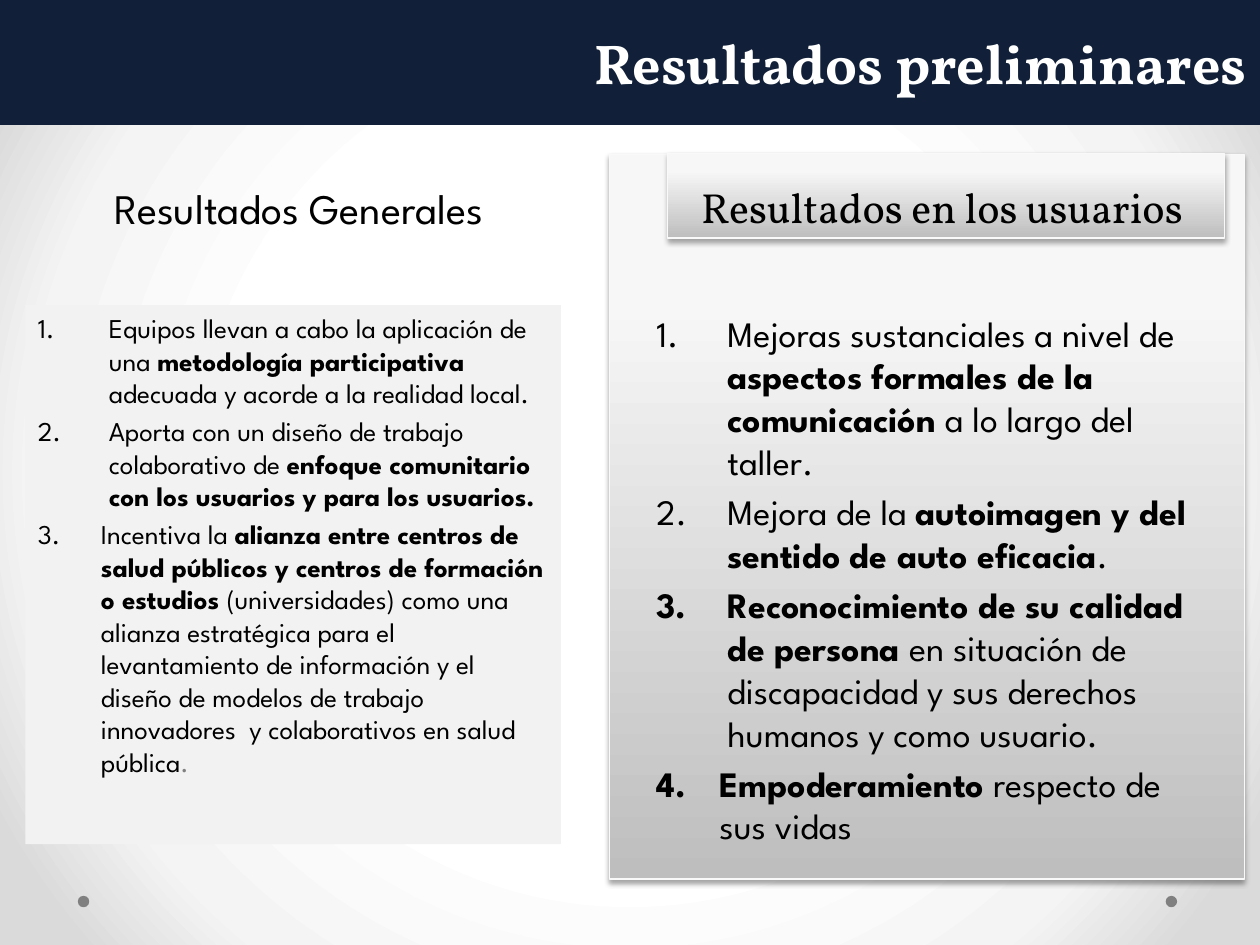
"""Build the slide of preliminary results with two numbered lists."""
from lxml import etree
from pptx import Presentation
from pptx.dml.color import RGBColor
from pptx.enum.shapes import MSO_SHAPE
from pptx.enum.text import MSO_ANCHOR, MSO_AUTO_SIZE, PP_ALIGN
from pptx.oxml.ns import qn
from pptx.util import Cm, Pt

RECT, OVAL = MSO_SHAPE.RECTANGLE, MSO_SHAPE.OVAL
TOP, MIDDLE, BOTTOM = MSO_ANCHOR.TOP, MSO_ANCHOR.MIDDLE, MSO_ANCHOR.BOTTOM
CENTER, RIGHT, LEFT = PP_ALIGN.CENTER, PP_ALIGN.RIGHT, PP_ALIGN.LEFT
NO_FIT = MSO_AUTO_SIZE.NONE

THEME = {
    "sans": "League Spartan", "serif": "Vollkorn",
    "title": 32, "heading": 24, "general": 15.5, "users": 20.4,
    "navy": "112038", "white": "FFFFFF", "black": "000000",
    "gray": "808080", "pale": "F2F2F2", "edge": "F9F9F9",
    "panel": [(0, "BEBEBE"), (80, "F7F7F7"), (100, "F8F8F8")],
    "backdrop": [(50, "FFFFFF"), (76, "F4F4F4"), (92, "DADADA")],
}

GENERAL = [
    "Equipos llevan a cabo la aplicación de una *metodología participativa *"
    "adecuada y acorde a la realidad local.",
    "Aporta con un diseño de trabajo colaborativo de "
    "*enfoque comunitario con los usuarios y para los usuarios.",
    "Incentiva la *alianza entre centros de salud públicos y centros de "
    "formación o estudios *(universidades) como una alianza estratégica para "
    "el levantamiento de información y el diseño de modelos de trabajo "
    "innovadores  y colaborativos en salud pública**.",
]
USERS = [
    "Mejoras sustanciales a nivel de *aspectos formales de la comunicación*"
    " a lo largo del taller.",
    "Mejora de la *autoimagen y del sentido de auto eficacia*.",
    "*Reconocimiento de su calidad de persona *en situación de discapacidad "
    "y sus derechos humanos y como usuario.",
    "*Empoderamiento* respecto de sus vidas",
]


def set_stops(fill, root, stops):
    fill.gradient()
    gs_list = next(root.iter(qn("a:gsLst")))
    for gs in list(gs_list):
        gs_list.remove(gs)
    for pos, color in stops:
        gs = etree.SubElement(gs_list, qn("a:gs"), pos=str(pos * 1000))
        etree.SubElement(gs, qn("a:srgbClr"), val=color)
    return gs_list.getparent()


def format_text(sp, anchor, align, font, size, color):
    tf = sp.text_frame
    tf.word_wrap = True
    tf.auto_size = NO_FIT
    tf.vertical_anchor = anchor
    for p in tf.paragraphs:
        p.alignment = align
        for r in p.runs:
            r.font.name = THEME[font]
            r.font.size = Pt(THEME[size])
            r.font.color.rgb = RGBColor.from_string(THEME[color])


prs = Presentation()
prs.slide_width, prs.slide_height = Cm(25.4), Cm(19.05)
slide = prs.slides.add_slide(prs.slide_layouts[4])
shapes = slide.shapes
title, head_general, list_general, head_users, list_users = slide.placeholders

grad = set_stops(slide.background.fill, slide.element, THEME["backdrop"])
lin = grad.find(qn("a:lin"))
if lin is not None:
    grad.remove(lin)
radial = etree.SubElement(grad, qn("a:path"), path="circle")
etree.SubElement(radial, qn("a:fillToRect"), l="50000", t="50000", r="50000", b="50000")

panel = shapes.add_shape(RECT, Cm(12.29), Cm(3.12), Cm(12.8), Cm(14.6))
shapes._spTree.insert(2, panel.element)
for x in (1.57, 23.5):
    dot = shapes.add_shape(OVAL, Cm(x), Cm(18.06), Cm(0.23), Cm(0.23))
    dot.shadow.inherit = False
    dot.fill.solid()
    dot.fill.fore_color.rgb = RGBColor.from_string(THEME["gray"])
    dot.line.fill.background()
    shapes._spTree.insert(2, dot.element)

for sp, x, y, w, h in (
    (title, 0, 0, 25.4, 2.52),
    (head_general, 0.51, 3.12, 11.23, 1.7),
    (head_users, 13.46, 3.1, 11.23, 1.7),
    (list_general, 0.51, 6.15, 10.8, 10.87),
    (list_users, 12.98, 6.15, 11.23, 10.87),
):
    sp.left, sp.top, sp.width, sp.height = Cm(x), Cm(y), Cm(w), Cm(h)

for sp in (panel, head_users):
    set_stops(sp.fill, sp.element, THEME["panel"])
    sp.fill.gradient_angle = 90
    sp.line.color.rgb = RGBColor.from_string(THEME["edge"])
    sp.line.width = Pt(0.75)
    sp.shadow.inherit = False
    effects = next(sp.element.iter(qn("a:effectLst")))
    shadow = etree.SubElement(effects, qn("a:outerShdw"), blurRad=str(Pt(3.1)),
                              dist=str(Pt(1.8)), dir="5400000", rotWithShape="0")
    tint = etree.SubElement(shadow, qn("a:srgbClr"), val=THEME["black"])
    etree.SubElement(tint, qn("a:alpha"), val="35000")

for sp, color in ((title, "navy"), (list_general, "pale")):
    sp.fill.solid()
    sp.fill.fore_color.rgb = RGBColor.from_string(THEME[color])

title.text_frame.text = "Resultados preliminares"
format_text(title, MIDDLE, RIGHT, "serif", "title", "white")
title.text_frame.paragraphs[0].runs[0].font.bold = True

for sp, text, font in (
    (head_general, "Resultados Generales ", "sans"),
    (head_users, "Resultados en los usuarios ", "serif"),
):
    sp.text_frame.text = text
    sp.text_frame.paragraphs[0].runs[0].font.bold = False
    format_text(sp, BOTTOM, CENTER, font, "heading", "black")

for sp, items, size in ((list_general, GENERAL, "general"), (list_users, USERS, "users")):
    tf = sp.text_frame
    for i, item in enumerate(items):
        p = tf.add_paragraph() if i else tf.paragraphs[0]
        for j, part in enumerate(item.split("*")):
            if part:
                r = p.add_run()
                r.text = part
                r.font.bold = j % 2 == 1
        indent = Cm(1.27 if i == len(items) - 1 else 1.43)
        pPr = p._p.get_or_add_pPr()
        pPr.set("marL", str(indent))
        pPr.set("indent", str(-indent))
        etree.SubElement(pPr, qn("a:buFont"), typeface="+mj-lt")
        etree.SubElement(pPr, qn("a:buAutoNum"), type="arabicPeriod")
    format_text(sp, TOP, LEFT, "sans", size, "black")

full_stop = list_general.text_frame.paragraphs[-1].runs[-1]
full_stop.font.color.rgb = RGBColor.from_string(THEME["gray"])

prs.save("out.pptx")
